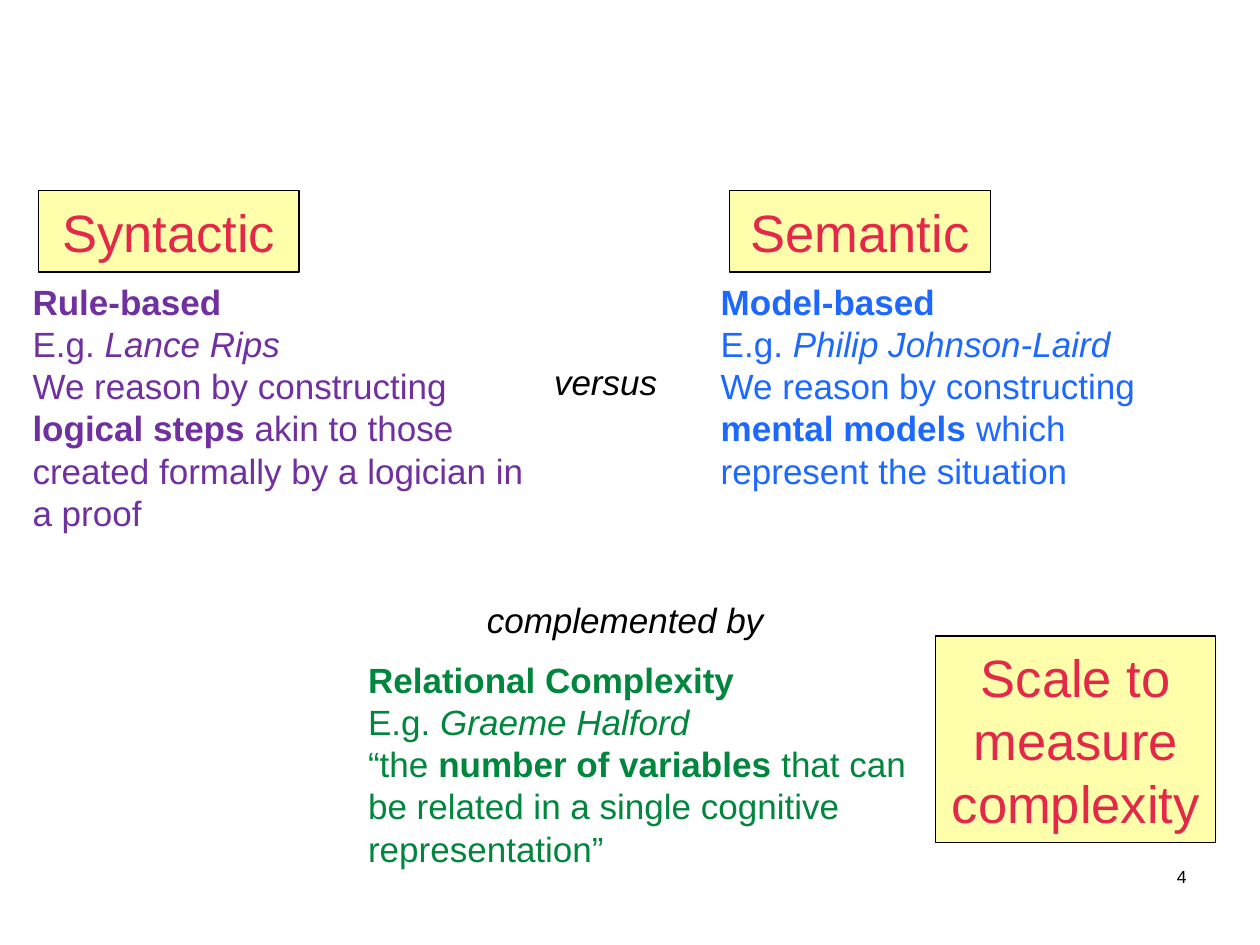
import pptx
import pptx.util
import pptx.dml.color
import pptx.enum.shapes
import pptx.enum.text

Pt = pptx.util.Pt
Align = pptx.enum.text.PP_ALIGN
Anchor = pptx.enum.text.MSO_ANCHOR


def paint(code):
    return pptx.dml.color.RGBColor.from_string(code)


class Deck:
    face = "Arial"
    ink = "000000"
    red = "E3284A"
    cream = "FFFFAB"

    def __init__(self, slide):
        self.slide = slide

    def style(self, run, size, color, bold=False, slant=False):
        font = run.font
        font.name = self.face
        font.size = Pt(size)
        font.bold = bold
        font.italic = slant
        font.color.rgb = paint(color)

    def frame(self, left, top, width, height):
        area = self.slide.shapes.add_textbox(Pt(left), Pt(top), Pt(width), Pt(height))
        area.text_frame.word_wrap = True
        return area.text_frame

    def label(self, spot, text, size=20, align=Align.LEFT, slant=True):
        frame = self.frame(*spot)
        frame.text = text
        para = frame.paragraphs[0]
        para.alignment = align
        self.style(para.runs[0], size, self.ink, slant=slant)
        return frame

    def theory(self, spot, color, title, name, start, key, end):
        frame = self.frame(*spot)
        lines = [
            [(title, True, False)],
            [("E.g. ", False, False), (name, False, True)],
            [(start, False, False), (key, True, False), (end, False, False)],
        ]
        for row, parts in enumerate(lines):
            para = frame.add_paragraph() if row else frame.paragraphs[0]
            for text, bold, slant in parts:
                run = para.add_run()
                run.text = text
                self.style(run, 20, color, bold, slant)

    def card(self, spot, text):
        box = self.slide.shapes.add_shape(
            pptx.enum.shapes.MSO_SHAPE.RECTANGLE, *map(Pt, spot))
        box.shadow.inherit = False
        box.fill.solid()
        box.fill.fore_color.rgb = paint(self.cream)
        box.line.color.rgb = paint(self.ink)
        box.line.width = Pt(0.75)
        frame = box.text_frame
        frame.word_wrap = True
        frame.vertical_anchor = Anchor.MIDDLE
        frame.text = text
        para = frame.paragraphs[0]
        para.alignment = Align.CENTER
        self.style(para.runs[0], 30, self.red)


def main():
    show = pptx.Presentation()
    show.slide_width = Pt(720)
    show.slide_height = Pt(540)
    deck = Deck(show.slides.add_slide(show.slide_layouts[6]))

    page = deck.label((515.5, 492, 168.5, 37.5), "4", 10, Align.RIGHT, False)
    page.margin_left = page.margin_right = Pt(6)
    page.margin_top = page.margin_bottom = Pt(3)

    deck.theory((11.5, 157, 298, 152.5), "7030A0", "Rule-based", "Lance Rips",
                "We reason by constructing ", "logical steps ",
                "akin to those created formally by a logician in a proof")
    deck.theory((404.75, 157, 298, 128), "1D68FF", "Model-based",
                "Philip Johnson-Laird", "We reason by constructing ",
                "mental models ", "which represent the situation")
    deck.label((309.5, 202.5, 95, 31.5), "versus")
    deck.label((246, 338.5, 222.5, 31.5), "complemented by", align=Align.CENTER)
    deck.theory((203.25, 373, 322, 128), "00863D", "Relational Complexity",
                "Graeme Halford", "“the ", "number of variables ",
                "that can be related in a single cognitive representation”")

    for left, text in ((22, "Syntactic"), (417, "Semantic")):
        deck.card((left, 109, 149, 46.5), text)
    deck.card((534.75, 363.5, 160, 118), "Scale to measure complexity")

    show.save("out.pptx")


if __name__ == "__main__":
    main()
